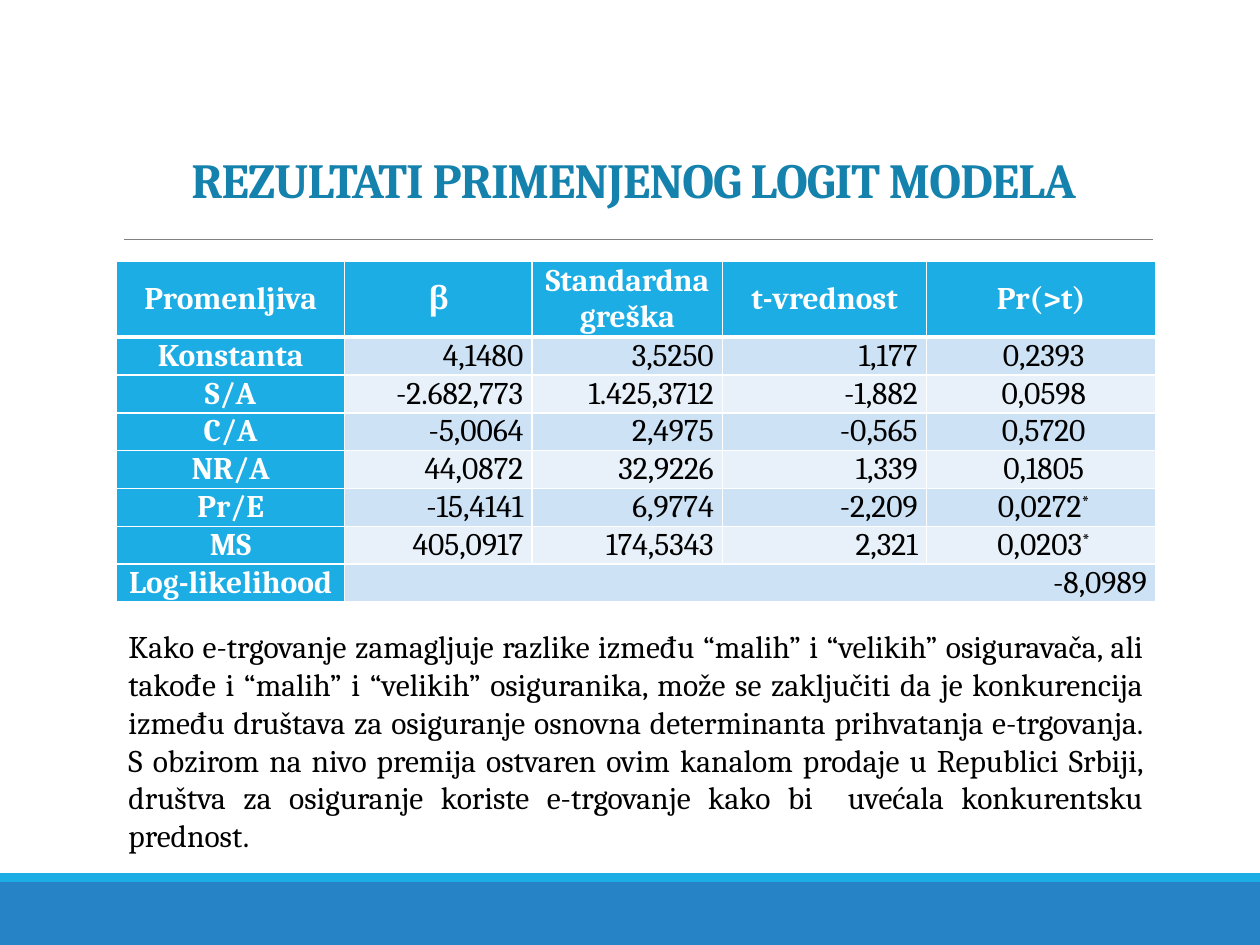
import pptx
import pptx.dml.color
import pptx.enum.shapes
import pptx.enum.text
import pptx.oxml
import pptx.oxml.ns
import pptx.util
from lxml import etree

Cm = pptx.util.Cm
Pt = pptx.util.Pt
RGBColor = pptx.dml.color.RGBColor
ALIGN = pptx.enum.text.PP_ALIGN
ANCHOR = pptx.enum.text.MSO_ANCHOR
qn = pptx.oxml.ns.qn

WHITE = RGBColor(0xFF, 0xFF, 0xFF)
BLACK = RGBColor(0x00, 0x00, 0x00)
GRAY = RGBColor(0x80, 0x80, 0x80)
CYAN = RGBColor(0x1C, 0xAD, 0xE4)
BLUE = RGBColor(0x26, 0x83, 0xC6)
TITLE_BLUE = RGBColor(0x14, 0x82, 0xAC)
BANDS = (RGBColor(0xCD, 0xE3, 0xF5), RGBColor(0xE8, 0xF1, 0xFA))

HEADINGS = ["Promenljiva", "β", "Standardna greška", "t-vrednost", "Pr(>t)"]
RESULTS = [
    ["Konstanta", "4,1480", "3,5250", "1,177", "0,2393"],
    ["S/A", "-2.682,773", "1.425,3712", "-1,882", "0,0598"],
    ["C/A", "-5,0064", "2,4975", "-0,565", "0,5720"],
    ["NR/A", "44,0872", "32,9226", "1,339", "0,1805"],
    ["Pr/E", "-15,4141", "6,9774", "-2,209", "0,0272*"],
    ["MS", "405,0917", "174,5343", "2,321", "0,0203*"],
    ["Log-likelihood", "-8,0989"],
]
COLUMN_WIDTHS = [4.6, 3.78, 3.84, 4.11, 4.62]
CONCLUSION = (
    "Kako e-trgovanje zamagljuje razlike između “malih” i “velikih” osiguravača, ali "
    "takođe i “malih” i “velikih” osiguranika, može se zaključiti da je konkurencija "
    "između društava za osiguranje osnovna determinanta prihvatanja e-trgovanja. "
    "S obzirom na nivo premija ostvaren ovim kanalom prodaje u Republici Srbiji, "
    "društva za osiguranje koriste e-trgovanje kako bi  uvećala konkurentsku prednost."
)


class SlideBuilder:
    """Draws styled elements on one slide."""

    font_name = "Cambria"
    body_size = 18

    def __init__(self, slide):
        self.slide = slide

    def style(self, paragraph, align, color, bold=False, size=body_size):
        paragraph.alignment = align
        font = paragraph.font
        font.name, font.size, font.bold = self.font_name, Pt(size), bold
        font.color.rgb = color

    def band(self, top, height, color):
        band = self.slide.shapes.add_shape(
            pptx.enum.shapes.MSO_SHAPE.RECTANGLE, 0, Cm(top), Cm(25.4), Cm(height))
        band.shadow.inherit = False
        band.fill.solid()
        band.fill.fore_color.rgb = color
        band.line.fill.background()

    def rule(self, left, right, y):
        rule = self.slide.shapes.add_connector(
            pptx.enum.shapes.MSO_CONNECTOR.STRAIGHT, Cm(left), Cm(y), Cm(right), Cm(y))
        rule.line.color.rgb = GRAY
        rule.line.width = Pt(0.5)
        etree.SubElement(rule._element.spPr, qn("a:effectLst"))

    def text(self, words, left, top, width, height, align, color,
             bold=False, size=body_size, anchor=ANCHOR.TOP):
        box = self.slide.shapes.add_textbox(Cm(left), Cm(top), Cm(width), Cm(height))
        frame = box.text_frame
        frame.word_wrap = True
        frame.vertical_anchor = anchor
        paragraph = frame.paragraphs[0]
        paragraph.add_run().text = words
        self.style(paragraph, align, color, bold, size)
        return paragraph

    def border(self, cell, side, width):
        line = etree.SubElement(cell._tc.get_or_add_tcPr(), qn("a:" + side), w=str(Pt(width)))
        fill = etree.SubElement(line, qn("a:solidFill"))
        etree.SubElement(fill, qn("a:srgbClr"), val=str(WHITE))

    def cell(self, cell, words, align, fill, color, bold, top=1, bottom=1, indent=0):
        cell.margin_left = cell.margin_right = Cm(0.18)
        cell.margin_top = cell.margin_bottom = 0
        cell.vertical_anchor = ANCHOR.MIDDLE
        for side, width in (("lnL", 1), ("lnR", 1), ("lnT", top), ("lnB", bottom)):
            self.border(cell, side, width)
        cell.fill.solid()
        cell.fill.fore_color.rgb = fill
        paragraph = cell.text_frame.paragraphs[0]
        paragraph.add_run().text = words.rstrip("*")
        if words.endswith("*"):
            star = paragraph.add_run()
            star.text = "*"
            star._r.get_or_add_rPr().set("baseline", "30000")
        self.style(paragraph, align, color, bold)
        if indent:
            paragraph._p.get_or_add_pPr().set("indent", str(Cm(indent)))

    def results_table(self, left, top, header_height, row_height):
        rows, columns = len(RESULTS) + 1, len(HEADINGS)
        table = self.slide.shapes.add_table(
            rows, columns, Cm(left), Cm(top), Cm(sum(COLUMN_WIDTHS)),
            Cm(header_height + row_height * len(RESULTS))).table
        table.first_row = table.horz_banding = False
        for column, width in zip(table.columns, COLUMN_WIDTHS):
            column.width = Cm(width)
        for index, row in enumerate(table.rows):
            row.height = Cm(row_height if index else header_height)
        table.cell(rows - 1, 1).merge(table.cell(rows - 1, columns - 1))
        for c, heading in enumerate(HEADINGS):
            self.cell(table.cell(0, c), heading, ALIGN.CENTER, CYAN, WHITE, True, bottom=3)
        for r, (variable, *values) in enumerate(RESULTS, 1):
            top_width = 3 if r == 1 else 1
            self.cell(table.cell(r, 0), variable, ALIGN.CENTER, CYAN, WHITE, True, top_width)
            for c, value in enumerate(values, 1):
                align = ALIGN.CENTER if c == columns - 1 else ALIGN.RIGHT
                indent = 0.1 if c == len(values) else 0
                self.cell(table.cell(r, c), value, align, BANDS[(r - 1) % 2], BLACK, False,
                          top_width, indent=indent)


def main():
    presentation = pptx.Presentation()
    presentation.slide_width, presentation.slide_height = Cm(25.4), Cm(19.05)
    builder = SlideBuilder(presentation.slides.add_slide(presentation.slide_layouts[6]))
    builder.band(17.78, 1.27, BLUE)
    builder.band(17.6, 0.18, CYAN)
    builder.rule(2.49, 23.24, 4.83)
    title = builder.text("REZULTATI PRIMENJENOG LOGIT MODELA", 2.29, 2.24, 20.96, 2.08,
                         ALIGN.CENTER, TITLE_BLUE, True, 28, ANCHOR.BOTTOM)
    title.line_spacing = 0.85
    title.runs[0]._r.get_or_add_rPr().set("spc", "-50")
    builder.results_table(2.35, 5.27, 1.44, 0.73)
    builder.text(CONCLUSION, 2.34, 12.52, 20.96, 4.88, ALIGN.JUSTIFY, BLACK)
    presentation.save("out.pptx")


if __name__ == "__main__":
    main()
